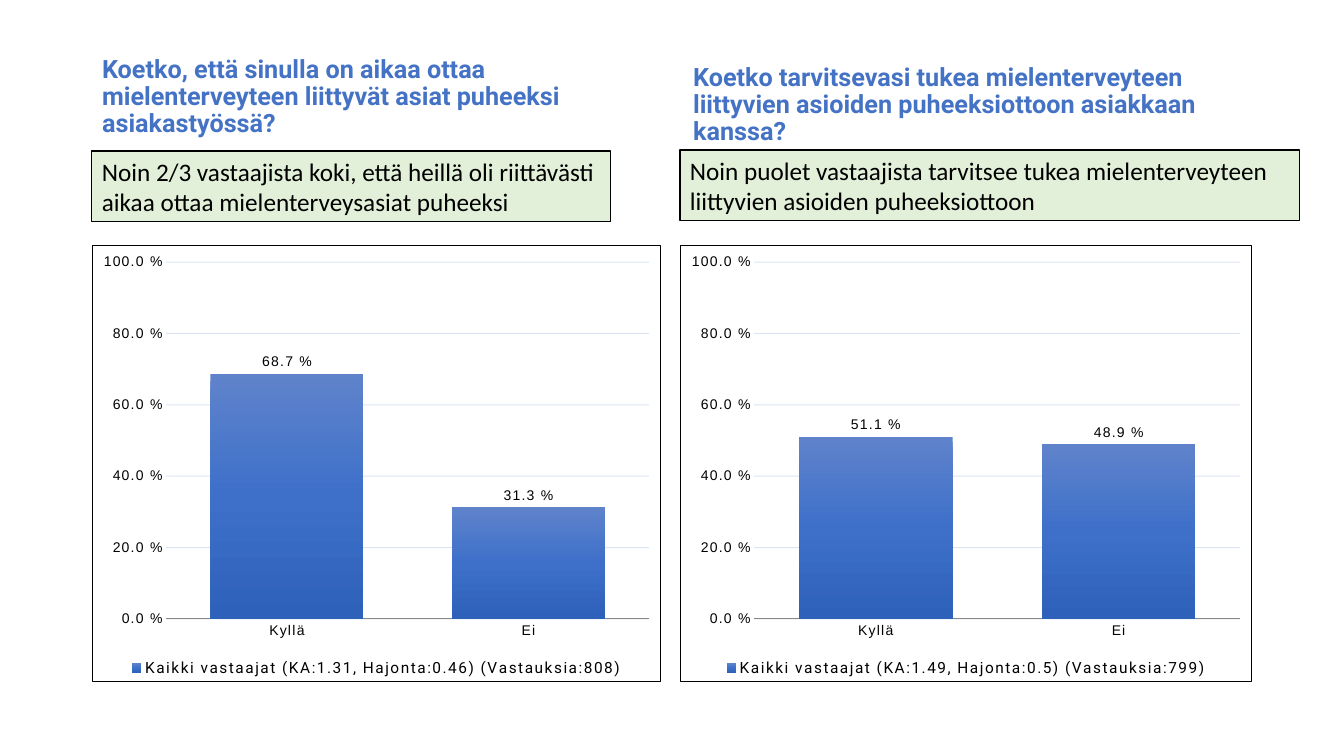
from copy import deepcopy
from lxml.etree import SubElement
from pptx import Presentation
from pptx.chart.data import CategoryChartData
from pptx.dml.color import RGBColor
from pptx.enum.chart import XL_CHART_TYPE, XL_LABEL_POSITION, XL_LEGEND_POSITION, XL_TICK_MARK
from pptx.enum.shapes import MSO_SHAPE
from pptx.enum.text import MSO_ANCHOR, MSO_AUTO_SIZE, PP_ALIGN
from pptx.oxml import parse_xml
from pptx.oxml.ns import nsdecls, qn
from pptx.util import Emu, Pt

THEME = {
    "head": {"name": "Roboto", "size": Pt(18), "bold": True, "color": "4472C4"},
    "note": {"name": "Calibri", "size": Pt(18), "bold": False, "color": "000000"},
    "chart": {"name": "Roboto", "size": Pt(11), "bold": False, "color": "000000"},
    "axis": {"name": "Arial", "size": Pt(10), "bold": False, "color": "000000"},
    "fill": "E2F0D9", "line": "000000", "grid": "4F81BD", "base": "868686",
    "bars": ["5F83CB", "3E70CA", "2E61BA"],
    "thin": Pt(0.75),
}
FORMAT = r"0.0\ %"


def px(*nums):
    return [Emu(round(n * 12192000 / 1344)) for n in nums]


def put(item, vals):
    for key, val in vals.items():
        if key == "color":
            item.color.rgb = RGBColor.from_string(val)
        else:
            setattr(item, key, val)


panels = [
    {
        "head": "Koetko, että sinulla on aikaa ottaa mielenterveyteen liittyvät asiat puheeksi asiakastyössä?",
        "note": ["Noin 2/3 vastaajista koki, että heillä oli riittävästi",
                 "aikaa ottaa mielenterveysasiat puheeksi"],
        "series": "Kaikki vastaajat (KA:1.31, Hajonta:0.46) (Vastauksia:808)",
        "vals": [0.687, 0.313],
        "spot": 1,
        "headbox": (92, 48, 569, 95),
        "notebox": (92, 151, 519, 71),
        "chartbox": (92, 245, 569, 437),
    },
    {
        "head": "Koetko tarvitsevasi tukea mielenterveyteen liittyvien asioiden puheeksiottoon asiakkaan kanssa?",
        "note": ["Noin puolet vastaajista tarvitsee tukea mielenterveyteen",
                 "liittyvien asioiden puheeksiottoon"],
        "series": "Kaikki vastaajat (KA:1.49, Hajonta:0.5) (Vastauksia:799)",
        "vals": [0.511, 0.489],
        "spot": 3,
        "headbox": (683, 48, 569, 103),
        "notebox": (680, 150, 620, 71),
        "chartbox": (680, 245, 572, 437),
    },
]

deck = Presentation()
deck.slide_width, deck.slide_height = px(1344, 756)
slide = deck.slides.add_slide(deck.slide_layouts.get_by_name("Comparison"))
spots = {hold.placeholder_format.idx: hold for hold in slide.placeholders}
for idx in (0, 2, 4):
    spots[idx].element.getparent().remove(spots[idx].element)

for panel in panels:
    head = spots[panel["spot"]]
    put(head, dict(zip(("left", "top", "width", "height"), px(*panel["headbox"]))))
    frame = head.text_frame
    frame.text = panel["head"]
    put(frame, {"word_wrap": True, "auto_size": MSO_AUTO_SIZE.NONE,
                "vertical_anchor": MSO_ANCHOR.BOTTOM})
    para = frame.paragraphs[0]
    put(para, {"line_spacing": 0.9, "space_before": Pt(10), "alignment": PP_ALIGN.LEFT})
    put(para.runs[0].font, THEME["head"])

    data = CategoryChartData(number_format=FORMAT)
    data.categories = ["Kyllä", "Ei"]
    data.add_series(panel["series"], panel["vals"])
    chart = slide.shapes.add_chart(
        XL_CHART_TYPE.COLUMN_CLUSTERED, *px(*panel["chartbox"]), data).chart
    put(chart, {"has_title": False, "has_legend": True})
    put(chart.font, THEME["chart"])
    put(chart.legend, {"position": XL_LEGEND_POSITION.BOTTOM, "include_in_layout": False})
    put(chart.legend.font, THEME["chart"])

    plot = chart.plots[0]
    put(plot, {"gap_width": 58, "vary_by_categories": False, "has_data_labels": True})
    labels = plot.data_labels
    put(labels, {"show_value": True, "number_format": FORMAT, "number_format_is_linked": False,
                 "position": XL_LABEL_POSITION.OUTSIDE_END})
    put(labels.font, THEME["axis"])

    cat, val = chart.category_axis, chart.value_axis
    for axis in (cat, val):
        put(axis, {"major_tick_mark": XL_TICK_MARK.NONE, "minor_tick_mark": XL_TICK_MARK.NONE})
        put(axis.tick_labels.font, THEME["axis"])
    put(cat.format.line, {"color": THEME["base"], "width": THEME["thin"]})
    put(val, {"minimum_scale": 0, "maximum_scale": 1, "major_unit": 0.2})
    put(val.tick_labels, {"number_format": FORMAT, "number_format_is_linked": False})
    val.format.line.fill.background()
    put(val.major_gridlines.format.line, {"color": THEME["grid"], "width": THEME["thin"]})

    fill = plot.series[0].format.fill
    fill.gradient()
    fill.gradient_angle = 270
    root = chart.element
    stops = root.xpath(".//a:gsLst")[0]
    stops.insert(1, deepcopy(stops[0]))
    for stop, tone, place in zip(fill.gradient_stops, THEME["bars"], (0, 0.5, 1)):
        put(stop, {"color": tone, "position": place})

    tint = root.xpath(".//c:majorGridlines//a:srgbClr")[0]
    SubElement(tint, qn("a:alpha")).set("val", "20000")
    for props in root.xpath(".//a:defRPr"):
        props.set("spc", "100")
    root.xpath("./c:txPr")[0].addprevious(parse_xml(
        f'<c:spPr {nsdecls("c", "a")}><a:noFill/><a:ln w="{THEME["thin"]}"><a:solidFill>'
        f'<a:srgbClr val="{THEME["line"]}"/></a:solidFill></a:ln></c:spPr>'))

for panel in panels:
    note = slide.shapes.add_shape(MSO_SHAPE.RECTANGLE, *px(*panel["notebox"]))
    note.shadow.inherit = False
    note.fill.solid()
    note.fill.fore_color.rgb = RGBColor.from_string(THEME["fill"])
    put(note.line, {"color": THEME["line"], "width": THEME["thin"]})
    frame = note.text_frame
    frame.text = "\n".join(panel["note"])
    put(frame, {"word_wrap": True, "auto_size": MSO_AUTO_SIZE.SHAPE_TO_FIT_TEXT,
                "vertical_anchor": MSO_ANCHOR.TOP})
    for para in frame.paragraphs:
        para.alignment = PP_ALIGN.LEFT
        put(para.runs[0].font, THEME["note"])

deck.save("out.pptx")
